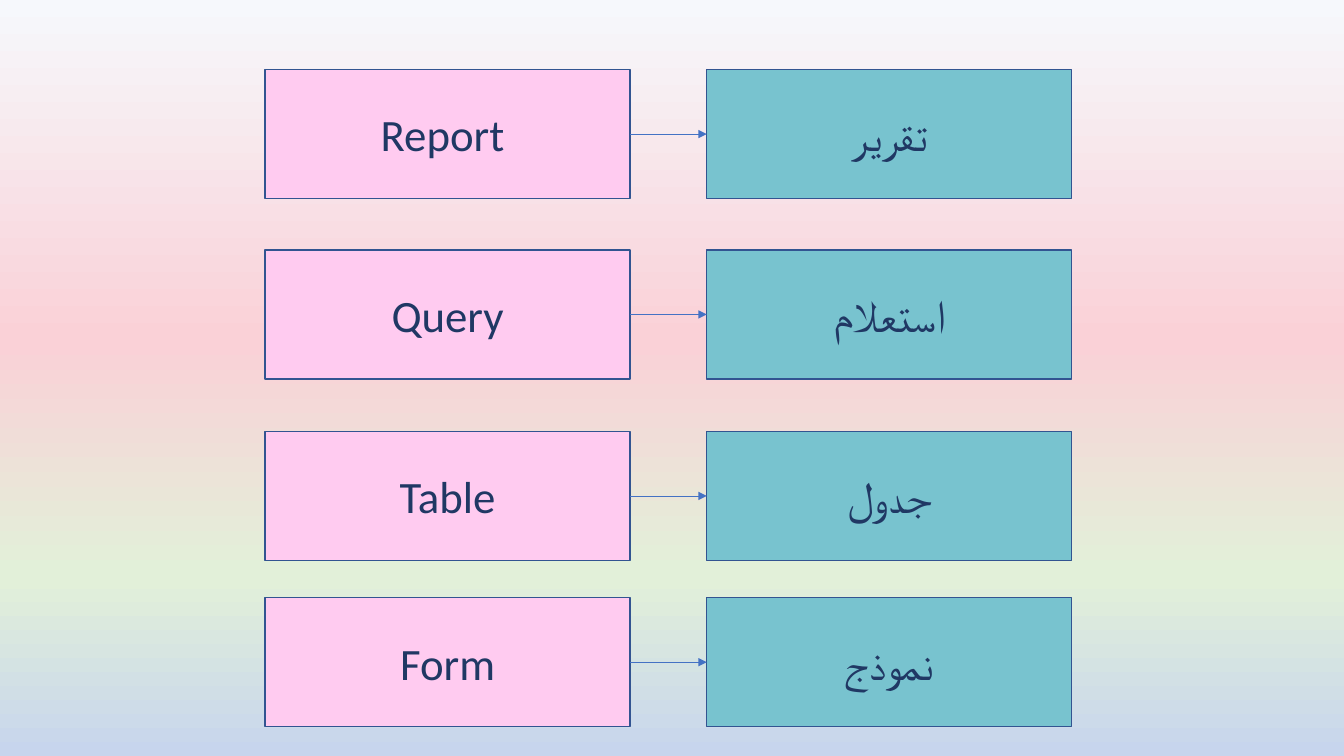
from lxml import etree
from pptx import Presentation
from pptx.dml.color import RGBColor
from pptx.enum.shapes import MSO_CONNECTOR, MSO_SHAPE
from pptx.enum.text import MSO_ANCHOR, PP_ALIGN
from pptx.oxml.ns import qn
from pptx.util import Inches, Pt

RECTANGLE = MSO_SHAPE.RECTANGLE
STRAIGHT = MSO_CONNECTOR.STRAIGHT
MIDDLE = MSO_ANCHOR.MIDDLE
CENTER = PP_ALIGN.CENTER
LEFT_SIDE, RIGHT_SIDE = 1, 3

TERMS = [
    ("Report ", "تقرير", 0.69),
    ("Query", "استعلام", 2.48),
    ("Table", "جدول", 4.28),
    ("Form", "نموذج", 5.93),
]
COLORS = {
    "english": "FFCBF0",
    "arabic": "78C3CF",
    "outline": "325491",
    "text": "203864",
    "arrow": "4472C4",
}
BACKGROUND_STOPS = [(0, "F6F8FC"), (45, "FAD1D7"), (76, "E2F0D9"), (100, "C7D5ED")]
ENGLISH_LEFT, ARABIC_LEFT = 2.63, 7.01
BOX_WIDTH, BOX_HEIGHT = 3.62, 1.28


def color(name):
    return RGBColor.from_string(COLORS[name])


def paint_background(slide):
    fill = slide.background.fill
    fill.gradient()
    fill.gradient_angle = 270
    stops = slide.element.find(".//" + qn("a:gsLst"))
    for stop in list(stops):
        stops.remove(stop)
    for position, value in BACKGROUND_STOPS:
        stop = etree.SubElement(stops, qn("a:gs"), pos=str(position * 1000))
        etree.SubElement(stop, qn("a:srgbClr"), val=value)


def add_box(slide, text, left, top, fill_name):
    shape = slide.shapes.add_shape(
        RECTANGLE, Inches(left), Inches(top), Inches(BOX_WIDTH), Inches(BOX_HEIGHT)
    )
    shape.shadow.inherit = False
    shape.fill.solid()
    shape.fill.fore_color.rgb = color(fill_name)
    shape.line.color.rgb = color("outline")
    shape.line.width = Pt(1)
    shape.text_frame.vertical_anchor = MIDDLE
    paragraph = shape.text_frame.paragraphs[0]
    paragraph.text = text
    paragraph.alignment = CENTER
    paragraph.font.name = "Calibri"
    paragraph.font.size = Pt(32)
    paragraph.font.color.rgb = color("text")
    return shape


def add_arrow(slide, start, end):
    connector = slide.shapes.add_connector(STRAIGHT, 0, 0, 0, 0)
    connector.begin_connect(start, RIGHT_SIDE)
    connector.end_connect(end, LEFT_SIDE)
    connector.line.color.rgb = color("arrow")
    connector.line.width = Pt(0.5)
    properties = connector.element.spPr
    etree.SubElement(properties.find(qn("a:ln")), qn("a:tailEnd"), type="triangle")
    etree.SubElement(properties, qn("a:effectLst"))


def main():
    presentation = Presentation()
    presentation.slide_width = Inches(13.33)
    presentation.slide_height = Inches(7.5)
    slide = presentation.slides.add_slide(presentation.slide_layouts[6])
    paint_background(slide)
    for english, arabic, top in TERMS:
        english_box = add_box(slide, english, ENGLISH_LEFT, top, "english")
        arabic_box = add_box(slide, arabic, ARABIC_LEFT, top, "arabic")
        add_arrow(slide, english_box, arabic_box)
    presentation.save("out.pptx")


if __name__ == "__main__":
    main()
